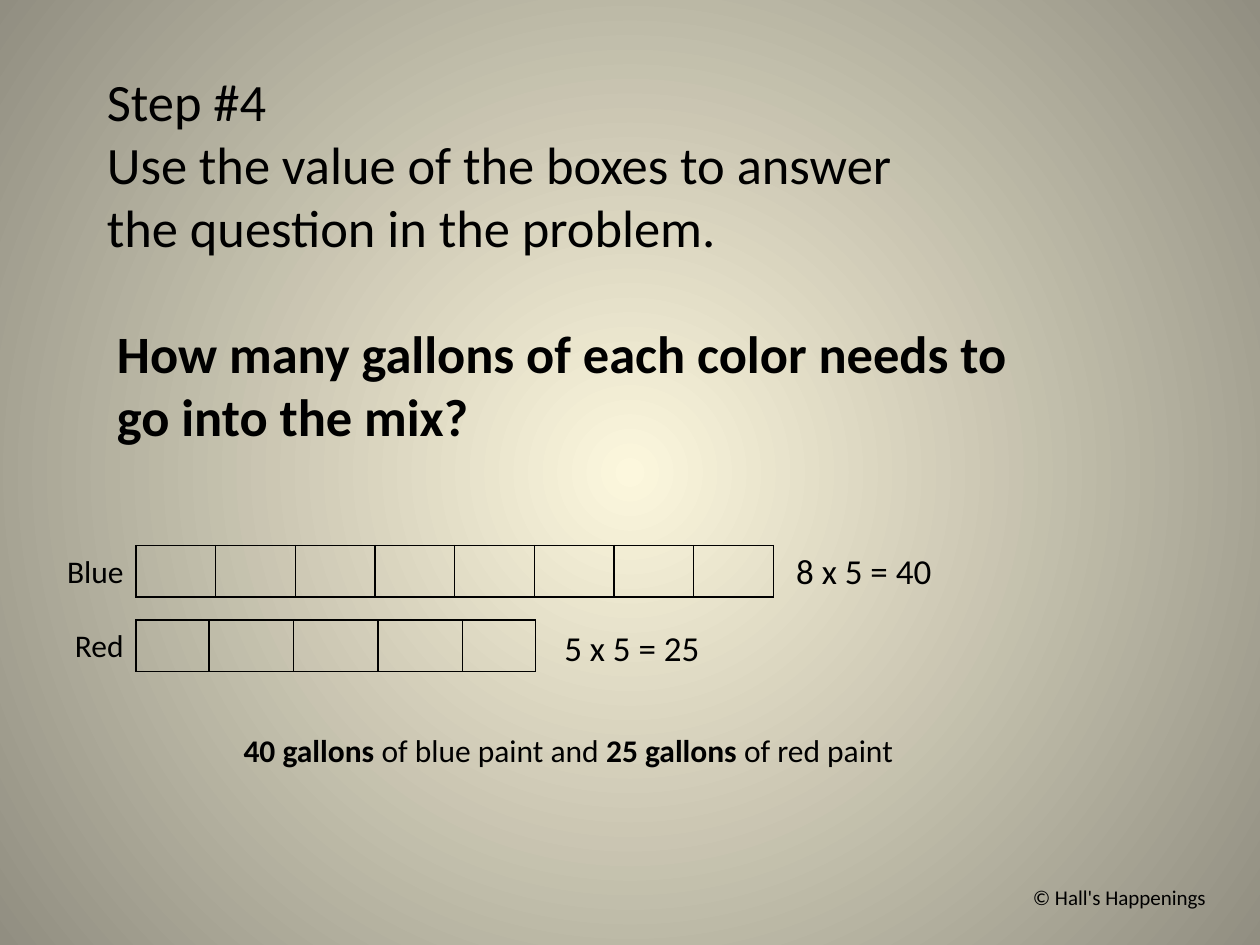
from lxml import etree
from pptx import Presentation
from pptx import util as u
from pptx.dml import color
from pptx.enum import text
from pptx.oxml import ns

COLORS = {"ink": "000000", "center": "FCF7DD", "edge": "918E81"}
ALIGN = text.PP_ALIGN

deck = Presentation()
deck.slide_width, deck.slide_height = u.Inches(10), u.Inches(7.5)
page = deck.slides.add_slide(deck.slide_layouts[6])

backdrop = page.background.fill
backdrop.gradient()
for stop, name in zip(backdrop.gradient_stops, ("center", "edge")):
    stop.color.rgb = color.RGBColor.from_string(COLORS[name])
linear = page.element.find(".//" + ns.qn("a:lin"))
radial = etree.Element(ns.qn("a:path"), path="circle")
etree.SubElement(radial, ns.qn("a:fillToRect"), l="50000", t="50000", r="50000", b="50000")
linear.getparent().replace(linear, radial)


def add_text(place, size, paragraphs, align=ALIGN.LEFT, anchor=text.MSO_ANCHOR.TOP):
    box = page.shapes.add_textbox(*map(u.Inches, place))
    frame = box.text_frame
    frame.word_wrap = True
    frame.vertical_anchor = anchor
    for index, runs in enumerate(paragraphs):
        para = frame.add_paragraph() if index else frame.paragraphs[0]
        para.alignment = align
        for words, bold in runs:
            span = para.add_run()
            span.text = words
            span.font.name = "Calibri"
            span.font.size = u.Pt(size)
            span.font.bold = bold
            span.font.color.rgb = color.RGBColor.from_string(COLORS["ink"])


def add_bar(top, widths):
    height = 0.41
    place = map(u.Inches, (1.08, top, sum(widths), height))
    table = page.shapes.add_table(1, len(widths), *place).table
    table.first_row = table.horz_banding = False
    table.rows[0].height = u.Inches(height)
    for column, width in zip(table.columns, widths):
        column.width = u.Inches(width)
    for cell in table.iter_cells():
        properties = cell._tc.get_or_add_tcPr()
        for side in ("lnL", "lnR", "lnT", "lnB"):
            border = etree.SubElement(properties, ns.qn("a:" + side), w=str(u.Pt(1)))
            paint = etree.SubElement(border, ns.qn("a:solidFill"))
            etree.SubElement(paint, ns.qn("a:srgbClr"), val=COLORS["ink"])
        cell.fill.background()


add_text((0.75, 0.5, 7.08, 1.62), 30, [
    [("Step #4", False)],
    [("Use the value of the boxes to answer the question in the problem.", False)],
])
add_text((0.83, 2.5, 7.45, 1.11), 30, [
    [("How many gallons of each color needs to go into the mix?", True)],
])

bars = [
    ("Blue", 4.33, [5.06 / 8] * 8, "8 x 5 = 40", (6.22, 4.31)),
    ("Red", 4.92, [0.58, 0.67, 0.67, 0.67, 0.58], "5 x 5 = 25", (4.38, 4.92)),
]
for label, top, widths, product, corner in bars:
    add_bar(top, widths)
    add_text((0.25, top, 0.83, 0.42), 18, [[(label, False)]], ALIGN.RIGHT)
    add_text((*corner, 2.25, 0.44), 20, [[(product, False)]])

add_text((1.67, 5.75, 5.68, 0.4), 18, [[
    ("40 gallons ", True),
    ("of blue paint and ", False),
    ("25 gallons ", True),
    ("of red paint", False),
]], ALIGN.CENTER)
add_text((6.5, 6.92, 3.17, 0.4), 12, [[("© Hall's Happenings", False)]],
         ALIGN.RIGHT, text.MSO_ANCHOR.MIDDLE)

deck.save("out.pptx")
